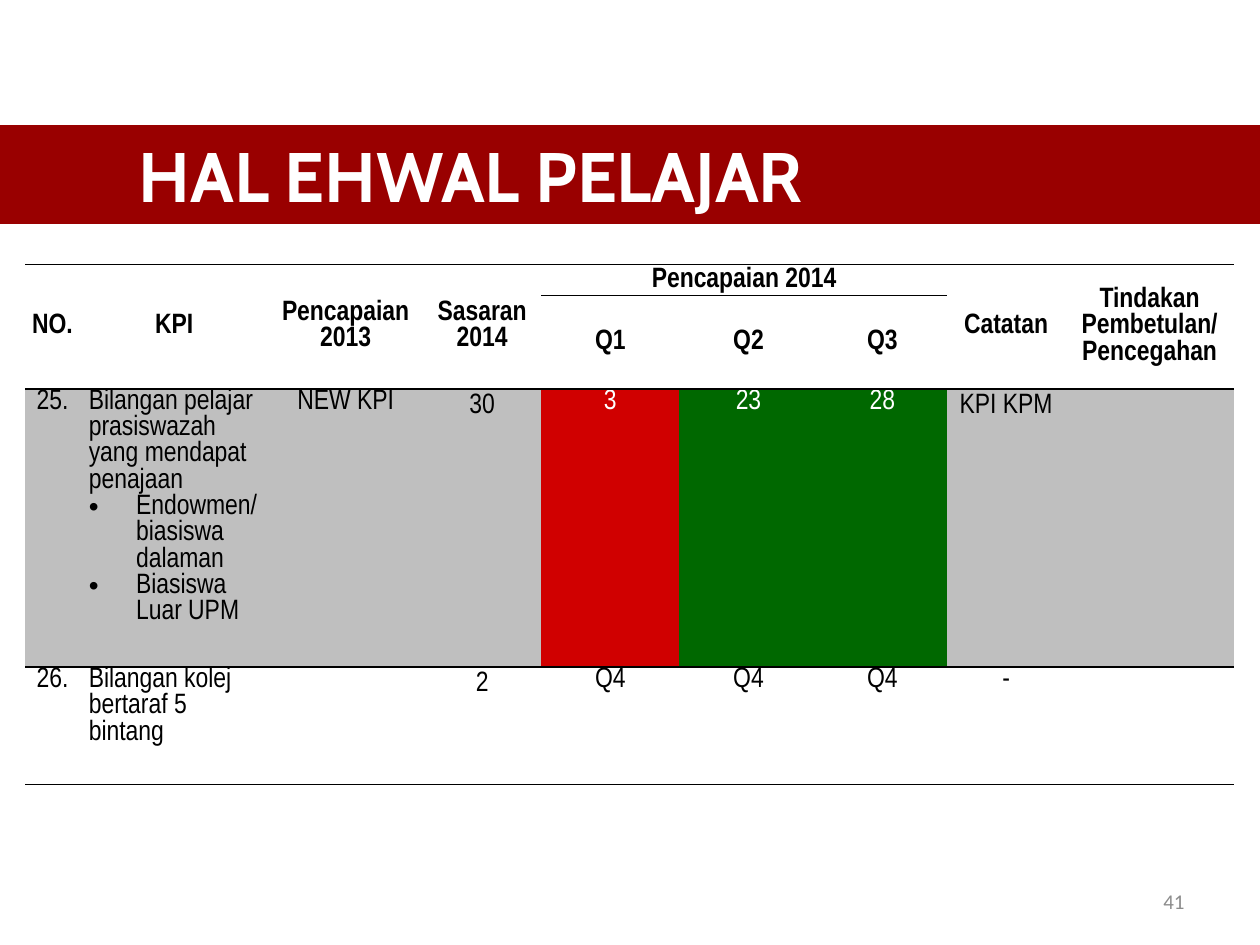
"""Build the student affairs KPI slide."""
from dataclasses import dataclass
from typing import Optional

from lxml.etree import Element, SubElement
from pptx import Presentation
from pptx.dml.color import RGBColor
from pptx.enum.text import MSO_AUTO_SIZE as AutoSize, MSO_ANCHOR as Anchor, PP_ALIGN as Align
from pptx.oxml.ns import qn
from pptx.util import Pt


@dataclass(frozen=True)
class Theme:
    banner: str = "990000"
    black: str = "000000"
    white: str = "FFFFFF"
    grey: str = "BFBFBF"
    red: str = "D00000"
    green: str = "006800"
    page_number: str = "8C8C8C"
    title_font: str = "Cabin"
    table_font: str = "Arial Narrow"
    number_font: str = "Calibri"
    title_size: int = 40
    table_size: int = 16
    number_size: int = 12
    plain_table_style: str = "{2D5ABB26-0587-4C30-8999-92F81FD0307C}"


@dataclass(frozen=True)
class Entry:
    text: str = ""
    fill: Optional[str] = None
    color: str = "000000"
    align: Align = Align.CENTER
    spacing: float = 1.0
    bullets: tuple[str, ...] = ()


@dataclass(frozen=True)
class Header:
    text: str
    row: int
    column: int
    last_row: int
    last_column: int


THEME = Theme()
COLUMN_WIDTHS = (31.5, 107.5, 88.5, 67.5, 79, 79, 74, 67.5, 96.5)
ROW_HEIGHTS = (17.75, 53.5, 159, 67)
QUARTERS = range(4, 7)
HEADERS = (
    Header("NO.", 0, 0, 1, 0),
    Header("KPI", 0, 1, 1, 1),
    Header("Pencapaian 2013", 0, 2, 1, 2),
    Header("Sasaran 2014", 0, 3, 1, 3),
    Header("Pencapaian 2014", 0, 4, 0, 6),
    Header("Catatan", 0, 7, 1, 7),
    Header("Tindakan Pembetulan/ Pencegahan", 0, 8, 1, 8),
    *(Header(f"Q{number}", 1, column, 1, column) for number, column in enumerate(QUARTERS, 1)),
)
ENTRIES = (
    (
        Entry("25.", THEME.grey),
        Entry("Bilangan pelajar prasiswazah yang mendapat penajaan", THEME.grey,
              align=Align.LEFT, bullets=("Endowmen/ biasiswa dalaman", "Biasiswa Luar UPM")),
        Entry("NEW KPI", THEME.grey),
        Entry("30", THEME.grey, spacing=1.15),
        Entry("3", THEME.red, THEME.white),
        Entry("23", THEME.green, THEME.white),
        Entry("28", THEME.green, THEME.white),
        Entry("KPI KPM", THEME.grey, spacing=1.15),
        Entry(fill=THEME.grey),
    ),
    (
        Entry("26."),
        Entry("Bilangan kolej bertaraf 5 bintang", align=Align.LEFT),
        Entry(),
        Entry("2", spacing=1.15),
        *(Entry("Q4") for _ in QUARTERS),
        Entry("-"),
        Entry(),
    ),
)


def style_paragraph(paragraph, name: str, size: float, color: str,
                    align: Align, bold: bool = False) -> None:
    paragraph.alignment = align
    font = paragraph.font
    font.name, font.size, font.bold = name, Pt(size), bold
    font.color.rgb = RGBColor.from_string(color)


def add_bullet(paragraph) -> None:
    properties = paragraph._p.get_or_add_pPr()
    properties.set("marL", str(Pt(27)))
    properties.set("indent", str(-Pt(27)))
    SubElement(properties, qn("a:buFont"), typeface="Arial")
    SubElement(properties, qn("a:buChar"), char="•")


def draw_edge(cell, edge: str) -> None:
    line = Element(qn(f"a:{edge}"), w=str(Pt(1)))
    fill = SubElement(line, qn("a:solidFill"))
    SubElement(fill, qn("a:srgbClr"), val=THEME.black)
    cell._tc.get_or_add_tcPr().insert(0, line)


def fill_cell(cell, entry: Entry, margin: float, anchor: Anchor, bold: bool = False) -> None:
    cell.margin_left = cell.margin_right = Pt(margin)
    cell.margin_top = cell.margin_bottom = Pt(0)
    cell.vertical_anchor = anchor
    if entry.fill:
        cell.fill.solid()
        cell.fill.fore_color.rgb = RGBColor.from_string(entry.fill)
    else:
        cell.fill.background()
    frame = cell.text_frame
    frame.text = "\n".join((entry.text, *entry.bullets))
    for index, paragraph in enumerate(frame.paragraphs):
        if index:
            add_bullet(paragraph)
        if entry.spacing != 1:
            paragraph.line_spacing = entry.spacing
        style_paragraph(paragraph, THEME.table_font, THEME.table_size,
                        entry.color, entry.align, bold)


def add_title(slide, text: str) -> None:
    title = slide.shapes.title
    title.left, title.top, title.width, title.height = Pt(0), Pt(71.5), Pt(720), Pt(56.5)
    title.fill.solid()
    title.fill.fore_color.rgb = RGBColor.from_string(THEME.banner)
    frame = title.text_frame
    frame.text = text
    frame.auto_size = AutoSize.NONE
    frame.vertical_anchor = Anchor.MIDDLE
    frame.margin_left = Pt(79.2)
    style_paragraph(frame.paragraphs[0], THEME.title_font, THEME.title_size,
                    THEME.white, Align.LEFT, True)


def add_kpi_table(slide) -> None:
    shape = slide.shapes.add_table(len(ROW_HEIGHTS), len(COLUMN_WIDTHS), Pt(14.3), Pt(151),
                                   Pt(sum(COLUMN_WIDTHS)), Pt(sum(ROW_HEIGHTS)))
    table = shape.table
    table.first_row = table.horz_banding = False
    for style in shape.element.iter(qn("a:tableStyleId")):
        style.text = THEME.plain_table_style
    for column, width in zip(table.columns, COLUMN_WIDTHS):
        column.width = Pt(width)
    for row, height in zip(table.rows, ROW_HEIGHTS):
        row.height = Pt(height)
    for header in HEADERS:
        cell = table.cell(header.row, header.column)
        last = table.cell(header.last_row, header.last_column)
        if (header.row, header.column) != (header.last_row, header.last_column):
            cell.merge(last)
        fill_cell(cell, Entry(header.text), 3, Anchor.MIDDLE, True)
    for row, entries in enumerate(ENTRIES, 2):
        for column, entry in enumerate(entries):
            fill_cell(table.cell(row, column), entry, 5, Anchor.TOP)
    for column in range(len(COLUMN_WIDTHS)):
        draw_edge(table.cell(3, column), "lnB")
        for row in (0, 2, 3):
            draw_edge(table.cell(row, column), "lnT")
    for column in QUARTERS:
        draw_edge(table.cell(1, column), "lnT")


def add_page_number(slide, text: str) -> None:
    frame = slide.shapes.add_textbox(Pt(516), Pt(500.5), Pt(168), Pt(28.75)).text_frame
    frame.word_wrap = True
    frame.vertical_anchor = Anchor.MIDDLE
    frame.text = text
    style_paragraph(frame.paragraphs[0], THEME.number_font, THEME.number_size,
                    THEME.page_number, Align.RIGHT)


def main() -> None:
    presentation = Presentation()
    presentation.slide_width, presentation.slide_height = Pt(720), Pt(540)
    slide = presentation.slides.add_slide(presentation.slide_layouts.get_by_name("Title Only"))
    add_title(slide, "HAL EHWAL PELAJAR")
    add_kpi_table(slide)
    add_page_number(slide, "41")
    presentation.save("out.pptx")


if __name__ == "__main__":
    main()
